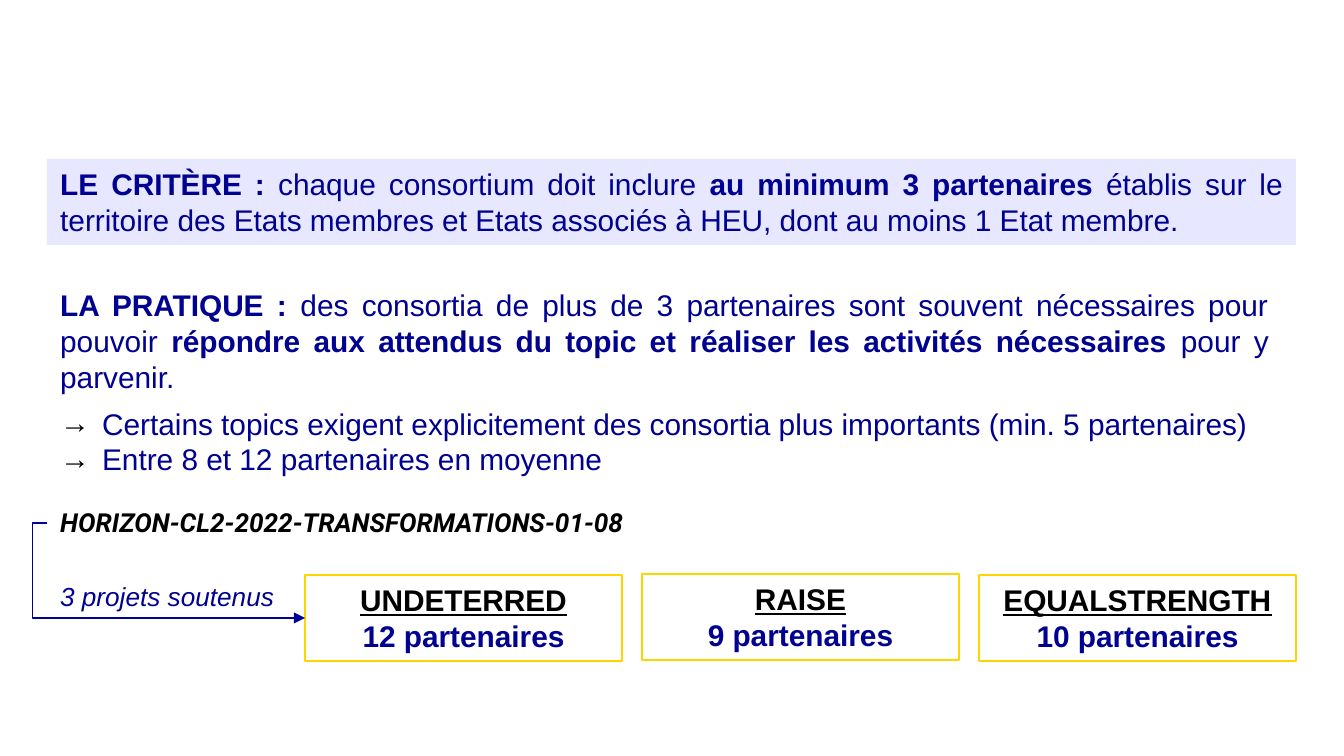
from lxml import etree
from pptx import Presentation
from pptx.dml.color import RGBColor
from pptx.enum.shapes import MSO_CONNECTOR, MSO_SHAPE
from pptx.enum.text import MSO_ANCHOR, MSO_AUTO_SIZE, PP_ALIGN
from pptx.oxml.ns import qn
from pptx.util import Emu, Pt

PX = 914400 / 134.4
NAVY = RGBColor(0x00, 0x00, 0x91)
LAVENDER = RGBColor(0xB6, 0xB6, 0xFF)
YELLOW = RGBColor(0xFF, 0xD5, 0x00)
BLACK = RGBColor(0x00, 0x00, 0x00)

# Each passage is (text, bold).
CRITERION = [
    ("LE CRITÈRE : ", True),
    ("chaque consortium doit inclure ", False),
    ("au minimum 3 partenaires ", True),
    ("établis sur le territoire des Etats membres et Etats associés à HEU, "
     "dont au moins 1 Etat membre.", False),
]
PRACTICE = [
    ("LA PRATIQUE : ", True),
    ("des consortia de plus de 3 partenaires sont souvent nécessaires pour pouvoir ", False),
    ("répondre aux attendus du topic et réaliser les activités nécessaires ", True),
    ("pour y parvenir.", False),
]
PRACTICE_POINTS = [
    "Certains topics exigent explicitement des consortia plus importants (min. 5 partenaires)",
    "Entre 8 et 12 partenaires en moyenne",
]
TOPIC = "HORIZON-CL2-2022-TRANSFORMATIONS-01-08"
FUNDED = "3 projets soutenus"
# Name, partners, top
PROJECTS = [
    ("UNDETERRED", "12 partenaires", 575),
    ("RAISE", "9 partenaires", 574),
    ("EQUALSTRENGTH", "10 partenaires", 575),
]

LEFT, RIGHT = 47, 1296
BOX_HEIGHT = 86
CARD_LEFT, CARD_WIDTH = 305, 317
CARD_GAP = (RIGHT - CARD_LEFT - len(PROJECTS) * CARD_WIDTH) / (len(PROJECTS) - 1)
BULLET_INDENT = 42


def px(value):
    return Emu(round(value * PX))


def style(font, color=NAVY, size=16, name="Arial", bold=False, italic=False, underline=False):
    font.name, font.size, font.color.rgb = name, Pt(size), color
    font.bold, font.italic, font.underline = bold, italic, underline


def set_up_frame(shape, wrap=True):
    frame = shape.text_frame
    frame.word_wrap = wrap
    frame.auto_size = MSO_AUTO_SIZE.SHAPE_TO_FIT_TEXT
    frame.vertical_anchor = MSO_ANCHOR.TOP
    return frame


def add_text_box(slide, box, wrap=True):
    return set_up_frame(slide.shapes.add_textbox(*map(px, box)), wrap)


def add_box(slide, box):
    shape = slide.shapes.add_shape(MSO_SHAPE.RECTANGLE, *map(px, box))
    shape.shadow.inherit = False
    return shape, set_up_frame(shape)


def write_passages(paragraph, passages):
    paragraph.alignment = PP_ALIGN.JUSTIFY
    for text, bold in passages:
        run = paragraph.add_run()
        run.text = text
        style(run.font, bold=bold)


def add_arrow_bullet(paragraph):
    properties = paragraph._p.get_or_add_pPr()
    properties.set("marL", str(px(BULLET_INDENT)))
    properties.set("indent", str(-px(BULLET_INDENT)))
    color = etree.SubElement(properties, qn("a:buClr"))
    etree.SubElement(color, qn("a:srgbClr"), val=str(BLACK))
    etree.SubElement(properties, qn("a:buFont"), typeface="Arial")
    etree.SubElement(properties, qn("a:buChar"), char="→")


def add_criterion(slide):
    shape, frame = add_box(slide, (LEFT, 159, RIGHT - LEFT, BOX_HEIGHT))
    shape.fill.solid()
    shape.fill.fore_color.rgb = LAVENDER
    color = shape.fill._xPr.find(qn("a:solidFill"))[0]
    etree.SubElement(color, qn("a:alpha"), val="32000")
    shape.line.fill.background()
    write_passages(frame.paragraphs[0], CRITERION)


def add_practice(slide):
    frame = add_text_box(slide, (LEFT, 280, 1235, 206))
    write_passages(frame.paragraphs[0], PRACTICE)
    frame.paragraphs[0].space_after = Pt(6)
    for point in PRACTICE_POINTS:
        paragraph = frame.add_paragraph()
        add_arrow_bullet(paragraph)
        write_passages(paragraph, [(point, False)])


def add_projects(slide):
    for index, (name, partners, top) in enumerate(PROJECTS):
        left = CARD_LEFT + index * (CARD_WIDTH + CARD_GAP)
        shape, frame = add_box(slide, (left, top, CARD_WIDTH, BOX_HEIGHT))
        shape.fill.background()
        shape.line.color.rgb = YELLOW
        shape.line.width = Pt(0.75)
        frame.text = f"{name}\n{partners}"
        for paragraph in frame.paragraphs:
            paragraph.alignment = PP_ALIGN.CENTER
        title, count = (paragraph.runs[0].font for paragraph in frame.paragraphs)
        style(title, BLACK, bold=True, underline=True)
        style(count, bold=True)


def add_labels(slide):
    topic = add_text_box(slide, (LEFT, 500, 637, 46))
    topic.text = TOPIC
    style(topic.paragraphs[0].runs[0].font, BLACK, 14, "Roboto", bold=True, italic=True)
    funded = add_text_box(slide, (LEFT, 574, 242, 46), wrap=False)
    funded.text = FUNDED
    style(funded.paragraphs[0].runs[0].font, size=14, italic=True)


def add_bracket_arrow(slide):
    """Lead from the topic, round its left side, to the first project."""
    ends = (LEFT, 523, CARD_LEFT, PROJECTS[0][2] + BOX_HEIGHT / 2)
    arrow = slide.shapes.add_connector(MSO_CONNECTOR.ELBOW, *map(px, ends))
    arrow.line.color.rgb = NAVY
    arrow.line.width = Pt(0.75)
    etree.SubElement(arrow.line._get_or_add_ln(), qn("a:tailEnd"), type="triangle")
    properties = arrow._element.spPr
    etree.SubElement(properties, qn("a:effectLst"))
    guides = properties.find(qn("a:prstGeom")).get_or_add_avLst()
    etree.SubElement(guides, qn("a:gd"), name="adj1", fmla="val -5700")


def main():
    presentation = Presentation()
    presentation.slide_width, presentation.slide_height = px(1344), px(756)
    slide = presentation.slides.add_slide(presentation.slide_layouts[6])
    add_criterion(slide)
    add_practice(slide)
    add_projects(slide)
    add_labels(slide)
    add_bracket_arrow(slide)
    presentation.save("out.pptx")


if __name__ == "__main__":
    main()
